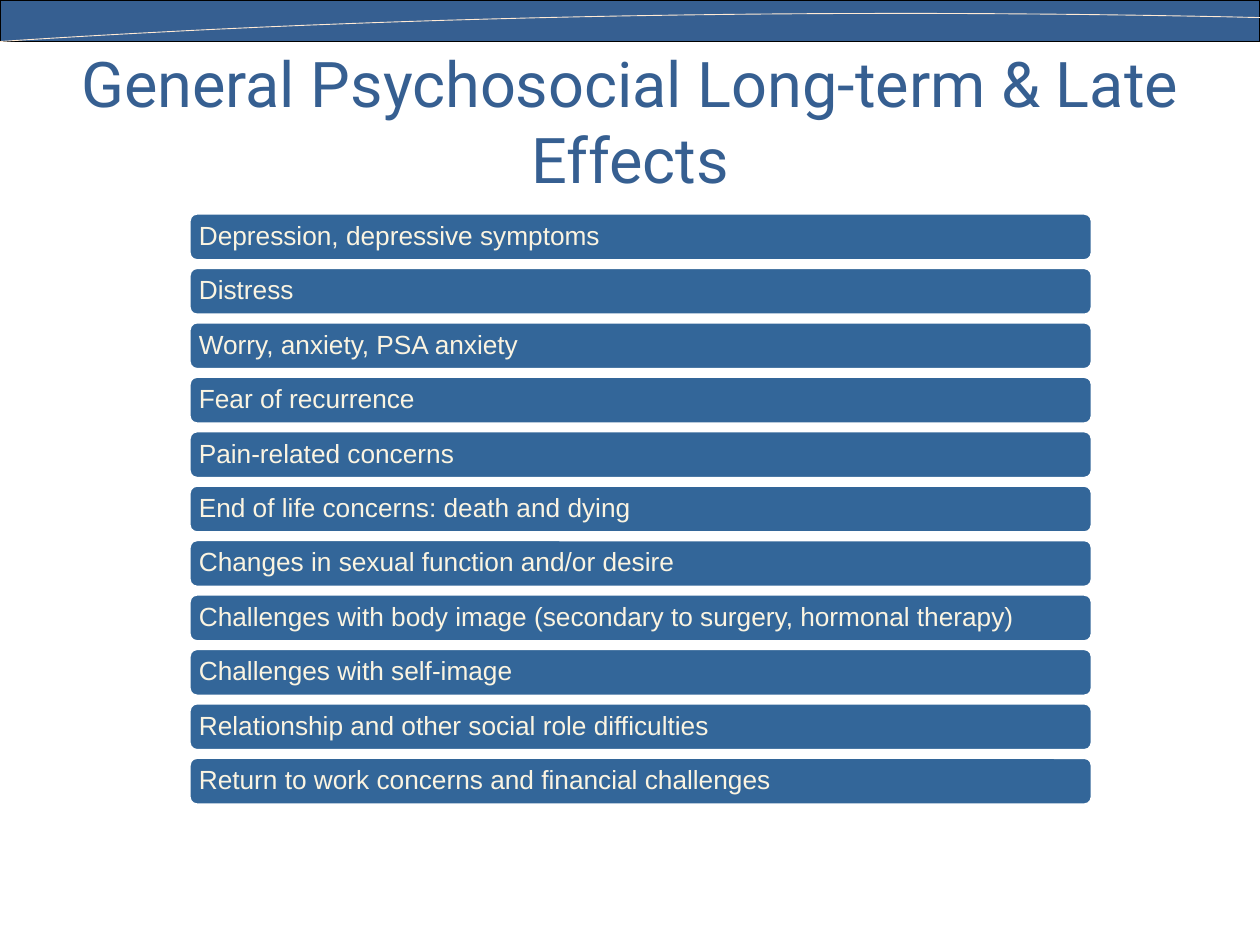
from dataclasses import dataclass

from pptx import Presentation
from pptx.dml.color import RGBColor
from pptx.enum.shapes import MSO_SHAPE
from pptx.enum.text import MSO_ANCHOR, PP_ALIGN
from pptx.util import Inches, Pt

RECTANGLE = MSO_SHAPE.RECTANGLE
ROUNDED = MSO_SHAPE.ROUNDED_RECTANGLE
MIDDLE = MSO_ANCHOR.MIDDLE
LEFT, CENTER = PP_ALIGN.LEFT, PP_ALIGN.CENTER


@dataclass(frozen=True)
class Theme:
    header: RGBColor = RGBColor(0x36, 0x5F, 0x91)
    header_line: RGBColor = RGBColor(0, 0, 0)
    arc: RGBColor = RGBColor(0xFF, 0xEA, 0xD5)
    bar: RGBColor = RGBColor(0x33, 0x66, 0x99)
    bar_line: RGBColor = RGBColor(0xFF, 0xFF, 0xFF)
    bar_text: RGBColor = RGBColor(0xFB, 0xF4, 0xE1)
    title_font: str = "Roboto"
    bar_font: str = "Arial"
    title_size: float = 36
    bar_size: float = 15


@dataclass(frozen=True)
class Box:
    left: float
    top: float
    width: float
    height: float

    def lengths(self) -> list:
        return [Inches(n) for n in (self.left, self.top, self.width, self.height)]


THEME = Theme()
HEADER = Box(0, 0, 10, 0.33)
TITLE = Box(0.5, 0.33, 9, 1.25)
FIRST_BAR = Box(1.5, 1.69, 7.17, 0.38)
LAST_BAR_TOP = 6.01
ARC = ((10, 0.14), (7.44, 0.08), (3.79, 0.08), (0, 0.33))
ARC_STEPS = 60
EFFECTS = (
    "Depression, depressive symptoms",
    "Distress",
    "Worry, anxiety, PSA anxiety",
    "Fear of recurrence",
    "Pain-related concerns",
    "End of life concerns: death and dying",
    "Changes in sexual function and/or desire",
    "Challenges with body image (secondary to surgery, hormonal therapy)",
    "Challenges with self-image",
    "Relationship and other social role difficulties",
    "Return to work concerns and financial challenges",
)


def add_block(shapes, kind, box: Box, fill: RGBColor, line: RGBColor, weight: float):
    shape = shapes.add_shape(kind, *box.lengths())
    shape.shadow.inherit = False
    shape.fill.solid()
    shape.fill.fore_color.rgb = fill
    shape.line.color.rgb = line
    shape.line.width = Pt(weight)
    return shape


def write(frame, text: str, align, font: str, size: float, color: RGBColor):
    frame.word_wrap = True
    frame.vertical_anchor = MIDDLE
    para = frame.paragraphs[0]
    para.alignment = align
    span = para.add_run()
    span.text = text
    span.font.name = font
    span.font.size = Pt(size)
    span.font.color.rgb = color
    return para


def arc_point(t: float) -> tuple:
    """Point on the cubic curve ARC, as lengths."""
    weights = ((1 - t) ** 3, 3 * t * (1 - t) ** 2, 3 * t**2 * (1 - t), t**3)
    return tuple(
        Inches(sum(w * point[axis] for w, point in zip(weights, ARC)))
        for axis in (0, 1)
    )


def add_header(page) -> None:
    add_block(page.shapes, RECTANGLE, HEADER, THEME.header, THEME.header_line, 0.75)
    points = [arc_point(step / ARC_STEPS) for step in range(ARC_STEPS + 1)]
    builder = page.shapes.build_freeform(*points[0])
    builder.add_line_segments(points[1:], close=False)
    arc = builder.convert_to_shape()
    arc.shadow.inherit = False
    arc.fill.background()
    arc.line.color.rgb = THEME.arc
    arc.line.width = Pt(0.5)


def add_title(page, text: str) -> None:
    title = page.shapes.title
    title.left, title.top, title.width, title.height = TITLE.lengths()
    write(title.text_frame, text, CENTER,
          THEME.title_font, THEME.title_size, THEME.header)


def add_bar(shapes, box: Box, text: str) -> None:
    bar = add_block(shapes, ROUNDED, box, THEME.bar, THEME.bar_line, 2)
    frame = bar.text_frame
    frame.margin_left = frame.margin_right = Inches(0.06)
    frame.margin_top = frame.margin_bottom = Inches(0.06)
    para = write(frame, text, LEFT, THEME.bar_font, THEME.bar_size, THEME.bar_text)
    para.line_spacing = 0.9


def main() -> None:
    deck = Presentation()
    deck.slide_width, deck.slide_height = Inches(10), Inches(7.5)
    page = deck.slides.add_slide(deck.slide_layouts[5])

    # Header band and title
    add_header(page)
    add_title(page, "General Psychosocial Long-term & Late Effects")

    # Evenly spaced list of effects
    bars = page.shapes.add_group_shape()
    pitch = (LAST_BAR_TOP - FIRST_BAR.top) / (len(EFFECTS) - 1)
    for index, effect in enumerate(EFFECTS):
        top = FIRST_BAR.top + index * pitch
        box = Box(FIRST_BAR.left, top, FIRST_BAR.width, FIRST_BAR.height)
        add_bar(bars.shapes, box, effect)

    deck.save("out.pptx")


if __name__ == "__main__":
    main()
